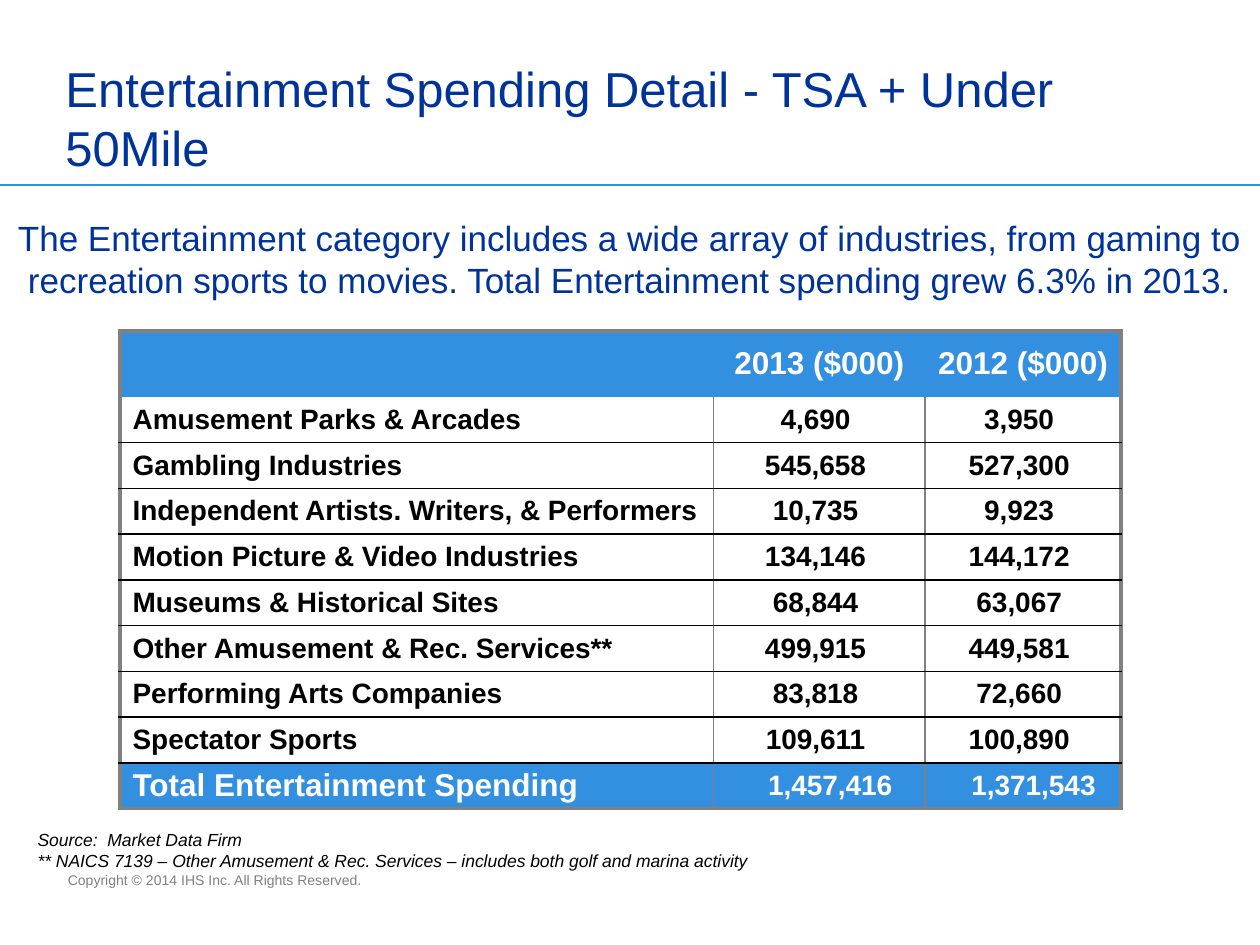
from lxml import etree
from pptx import Presentation
from pptx.dml.color import RGBColor
from pptx.enum.shapes import MSO_CONNECTOR
from pptx.enum.text import MSO_ANCHOR, PP_ALIGN
from pptx.oxml.ns import qn
from pptx.util import Pt

LEFT, CENTER, RIGHT = PP_ALIGN.LEFT, PP_ALIGN.CENTER, PP_ALIGN.RIGHT
TOP, MIDDLE, BOTTOM = MSO_ANCHOR.TOP, MSO_ANCHOR.MIDDLE, MSO_ANCHOR.BOTTOM
STRAIGHT = MSO_CONNECTOR.STRAIGHT

NAVY, BLUE, GRAY, BLACK, WHITE = "003399", "3390E1", "808080", "000000", "FFFFFF"

TITLE = "Entertainment Spending Detail - TSA + Under 50Mile"
SUMMARY = ("The Entertainment category includes a wide array of industries, from gaming to "
           "recreation sports to movies. Total Entertainment spending grew 6.3% in 2013.")
SPENDING = [
    ("", "2013 ($000)", "2012 ($000)"),
    ("Amusement Parks & Arcades", "4,690", "3,950"),
    ("Gambling Industries", "545,658", "527,300"),
    ("Independent Artists. Writers, & Performers", "10,735", "9,923"),
    ("Motion Picture & Video Industries", "134,146", "144,172"),
    ("Museums & Historical Sites", "68,844", "63,067"),
    ("Other Amusement & Rec. Services**", "499,915", "449,581"),
    ("Performing Arts Companies", "83,818", "72,660"),
    ("Spectator Sports", "109,611", "100,890"),
    ("Total Entertainment Spending", "1,457,416", "1,371,543"),
]
NOTES = ["Source:  Market Data Firm",
         "** NAICS 7139 – Other Amusement & Rec. Services – includes both golf and marina activity"]
COPYRIGHT = ["Copyright © 2014 IHS Inc. All Rights Reserved."]

COL_WIDTHS = (339.1, 121, 111.8)
HEADER_H, ROW_H = 37.6, 26.16
OUTER, INNER, RULE, NONE = (GRAY, 2.25), (GRAY, 1), (BLACK, 1), None


def rgb(color):
    return RGBColor.from_string(color)


def write(tf, lines, size, color, align=LEFT, anchor=TOP, wrap=True, bold=False, italic=False):
    tf.word_wrap = wrap
    tf.vertical_anchor = anchor
    tf.text = "\n".join(lines)
    for p in tf.paragraphs:
        p.alignment = align
        f = p.font
        f.name, f.size, f.bold, f.italic = "Arial", Pt(size), bold, italic
        f.color.rgb = rgb(color)


def add_text(s, box, lines, size, color, **style):
    sp = s.shapes.add_textbox(*map(Pt, box))
    write(sp.text_frame, lines, size, color, **style)


def set_border(cell, side, border):
    ln = etree.SubElement(cell._tc.get_or_add_tcPr(), qn("a:ln" + side))
    if border is NONE:
        etree.SubElement(ln, qn("a:noFill"))
        return
    color, width = border
    ln.set("w", str(Pt(width)))
    fill = etree.SubElement(ln, qn("a:solidFill"))
    etree.SubElement(fill, qn("a:srgbClr"), val=color)


def cell_margins(header, total, col):
    if header or col == 0:
        return 7.2, 7.2
    if total:
        return 0, 18.8 if col == 1 else 14.4
    return 0, 4.4


def format_cell(cell, text, row, col):
    header, total = row == 0, row == len(SPENDING) - 1
    band = header or total
    inner = NONE if header else INNER
    set_border(cell, "L", OUTER if col == 0 else inner)
    set_border(cell, "R", OUTER if col == len(COL_WIDTHS) - 1 else inner)
    set_border(cell, "T", OUTER if header else NONE if row == 1 else RULE)
    set_border(cell, "B", OUTER if total else NONE if header else RULE)
    cell.fill.solid()
    cell.fill.fore_color.rgb = rgb(BLUE if band else WHITE)
    cell.margin_left, cell.margin_right = map(Pt, cell_margins(header, total, col))
    cell.margin_top = cell.margin_bottom = Pt(0.7)
    cell.vertical_anchor = MIDDLE
    align = LEFT if col == 0 else RIGHT if total else CENTER
    size = 18 if header or (total and col == 0) else 16
    write(cell.text_frame, [text], size, WHITE if band else BLACK,
          align=align, anchor=None, wrap=None, bold=True)


def add_spending_table(s, left, top):
    heights = [HEADER_H] + [ROW_H] * (len(SPENDING) - 1)
    table = s.shapes.add_table(len(SPENDING), len(COL_WIDTHS), Pt(left), Pt(top),
                               Pt(sum(COL_WIDTHS)), Pt(sum(heights))).table
    for column, width in zip(table.columns, COL_WIDTHS):
        column.width = Pt(width)
    for r, (values, height) in enumerate(zip(SPENDING, heights)):
        table.rows[r].height = Pt(height)
        for c, text in enumerate(values):
            format_cell(table.cell(r, c), text, r, c)


def main():
    prs = Presentation()
    prs.slide_width, prs.slide_height = Pt(720), Pt(540)
    s = prs.slides.add_slide(prs.slide_layouts[5])

    title = s.shapes.title
    title.left, title.top, title.width, title.height = map(Pt, (30.2, 15.1, 592.6, 89.3))
    write(title.text_frame, [TITLE], 28, NAVY, anchor=BOTTOM)

    rule = s.shapes.add_connector(STRAIGHT, Pt(0), Pt(105.8), Pt(720), Pt(105.8))
    rule.line.color.rgb = rgb(BLUE)
    rule.line.width = Pt(1)
    etree.SubElement(rule._element.spPr, qn("a:effectLst"))

    add_text(s, (0, 92.2, 720, 110.9), [SUMMARY], 20, NAVY, align=CENTER, anchor=MIDDLE)
    add_spending_table(s, 68.6, 189.2)
    add_text(s, (14.4, 470.2, 419.8, 31), NOTES, 10, BLACK, wrap=False, italic=True)
    add_text(s, (31.7, 494.6, 257, 16.6), COPYRIGHT, 8, GRAY)
    prs.save("out.pptx")


if __name__ == "__main__":
    main()
